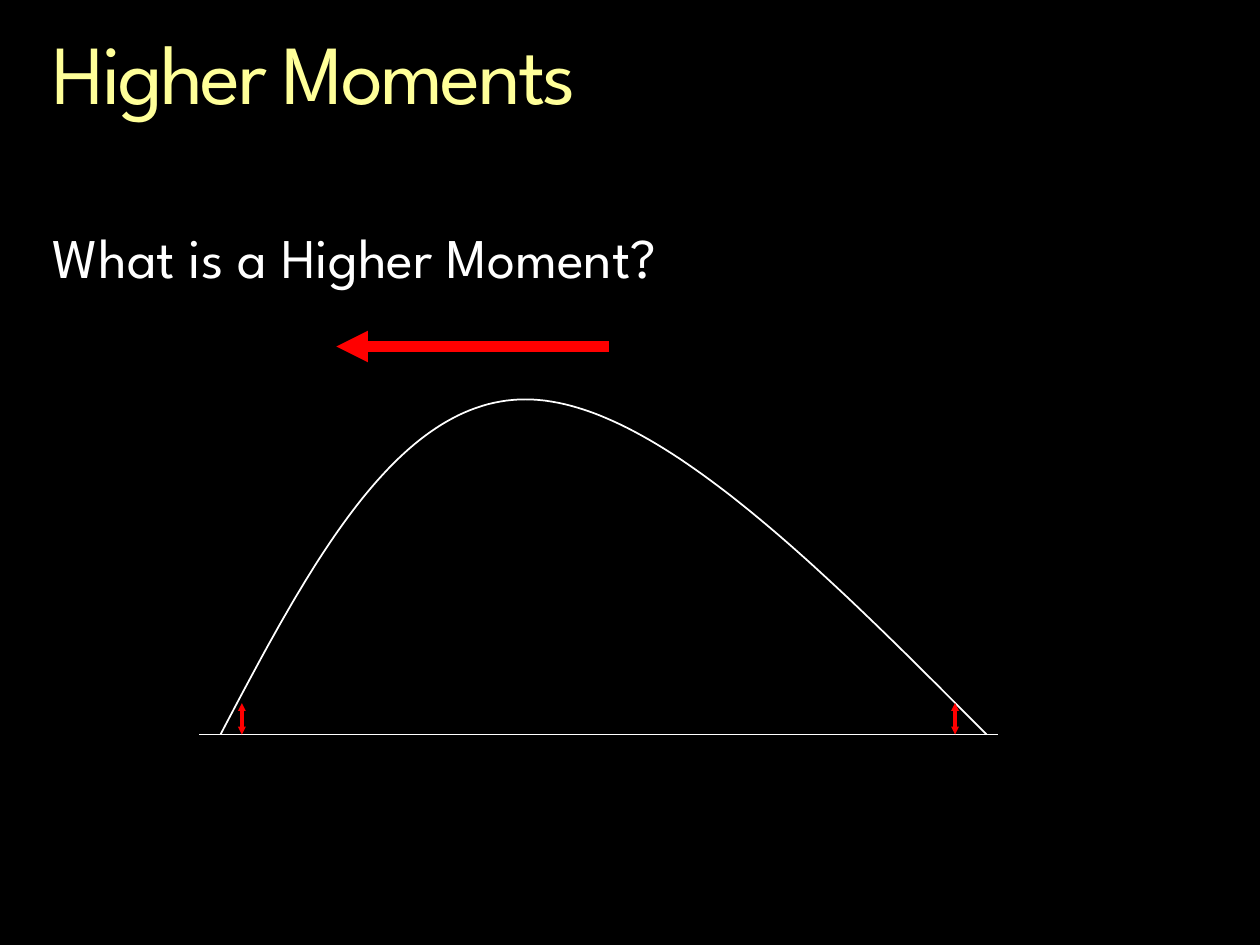
from lxml import etree
from pptx import Presentation
from pptx.dml.color import RGBColor
from pptx.enum.shapes import MSO_CONNECTOR
from pptx.enum.text import MSO_ANCHOR, MSO_AUTO_SIZE, PP_ALIGN
from pptx.oxml.ns import qn
from pptx.util import Inches, Pt

FONT = "League Spartan"
COLORS = {"background": "000000", "title": "FFFF99", "white": "FFFFFF", "red": "FF0000"}

# Content: text, top, height, size, colour, letter spacing in points
TEXTS = [
    ("Higher Moments", 0.25, 0.73, 48, "title", -1.5),
    ("What is a Higher Moment?", 1.83, 0.48, 32, "white", 0),
]
MARGIN = 0.42

# Skewed distribution: left foot, peak and right foot, joined by Bezier curves
BASE, PEAK = 5.83, 3.17
CURVES = [
    [(1.75, BASE), (2.45, 4.5), (3.15, PEAK), (4.17, PEAK)],
    [(4.17, PEAK), (5.18, PEAK), (6.51, 4.5), (7.83, BASE)],
]
STEPS = 60

# Lines: start, end, colour, width, arrowheads, arrowhead size
TAIL_HEIGHT = 0.25
LINES = [
    ((1.58, BASE), (7.92, BASE), "white", 1, (), "med"),
    ((4.83, 2.75), (2.67, 2.75), "red", 6, ("tailEnd",), "med"),
] + [
    ((x, BASE - TAIL_HEIGHT), (x, BASE), "red", 2.25, ("headEnd", "tailEnd"), "sm")
    for x in (1.92, 7.58)
]


def rgb(name):
    return RGBColor.from_string(COLORS[name])


def bezier(points, t):
    weights = ((1 - t) ** 3, 3 * t * (1 - t) ** 2, 3 * t * t * (1 - t), t ** 3)
    return tuple(Inches(sum(w * p[axis] for w, p in zip(weights, points)))
                 for axis in (0, 1))


def fill_placeholder(sp, text, top, height, size, color, spacing):
    sp.left, sp.top = Inches(MARGIN), Inches(top)
    sp.width, sp.height = prs.slide_width - 2 * Inches(MARGIN), Inches(height)
    tf = sp.text_frame
    tf.text = text
    tf.margin_left = tf.margin_right = tf.margin_top = tf.margin_bottom = 0
    tf.word_wrap = True
    tf.auto_size = MSO_AUTO_SIZE.SHAPE_TO_FIT_TEXT
    tf.vertical_anchor = MSO_ANCHOR.TOP
    p = tf.paragraphs[0]
    p.alignment, p.line_spacing, p.space_before = PP_ALIGN.LEFT, 0.9, Pt(0)
    pPr = p._p.get_or_add_pPr()
    pPr.set("marL", "0")
    pPr.set("indent", "0")
    etree.SubElement(pPr, qn("a:buNone"))
    r = p.runs[0]
    r.font.name, r.font.size = FONT, Pt(size)
    r.font.color.rgb = rgb(color)
    r._r.get_or_add_rPr().set("spc", str(int(spacing * 100)))


def add_line(start, end, color, width, heads, head_size):
    line = s.shapes.add_connector(
        MSO_CONNECTOR.STRAIGHT, *(Inches(v) for v in start + end))
    line.line.color.rgb, line.line.width = rgb(color), Pt(width)
    for head in heads:
        etree.SubElement(line.line._get_or_add_ln(), qn(f"a:{head}"),
                         type="triangle", w=head_size, len=head_size)
    etree.SubElement(line._element.spPr, qn("a:effectLst"))


prs = Presentation()
prs.slide_width, prs.slide_height = Inches(10), Inches(7.5)
s = prs.slides.add_slide(prs.slide_layouts[1])
s.background.fill.solid()
s.background.fill.fore_color.rgb = rgb("background")

# Title and question
for sp, item in zip(s.placeholders, TEXTS):
    fill_placeholder(sp, *item)

# Distribution curve, in whole EMU because the builder rounds its points
points = [bezier(c, i / STEPS) for c in CURVES for i in range(STEPS + 1)]
builder = s.shapes.build_freeform(*points[0])
builder.add_line_segments(points[1:], close=False)
curve = builder.convert_to_shape()
curve.shadow.inherit = False
curve.fill.background()
curve.line.color.rgb, curve.line.width = rgb("white"), Pt(1)

# Baseline, shift arrow and tail markers
for item in LINES:
    add_line(*item)

prs.save("out.pptx")
